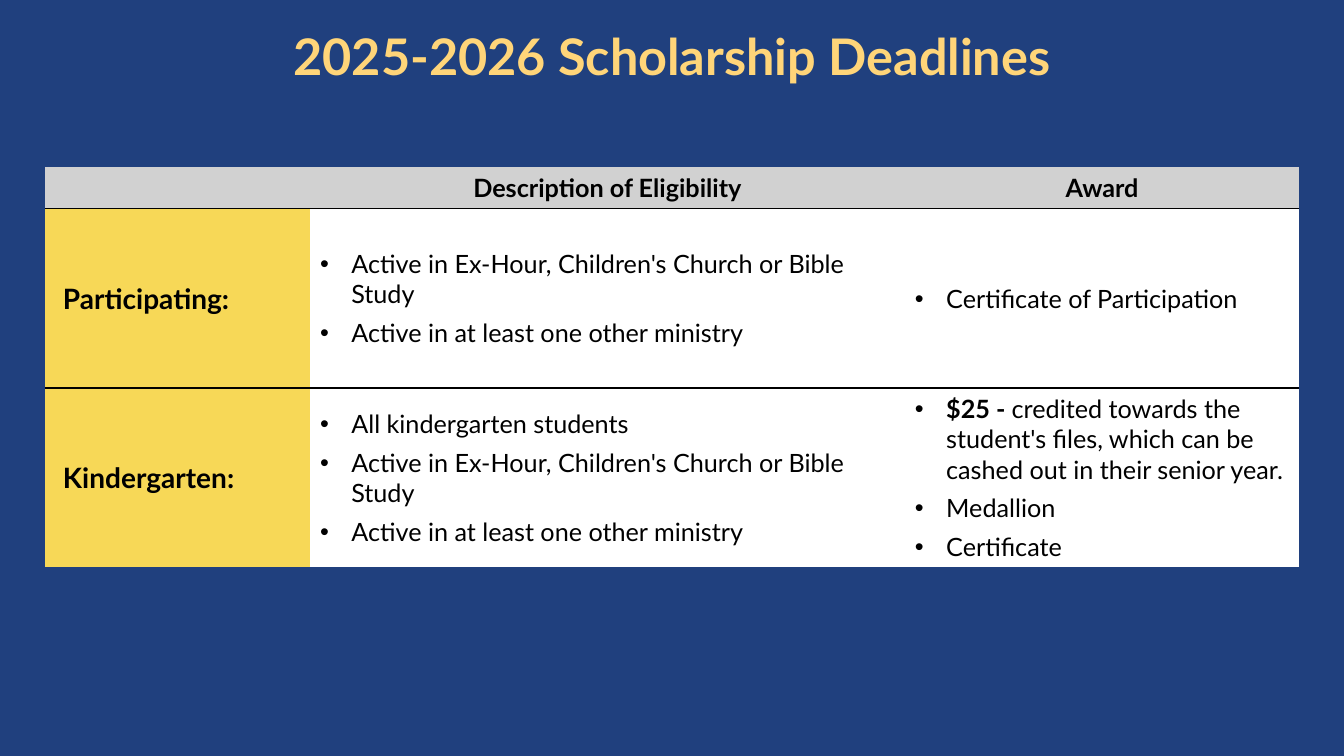
from dataclasses import dataclass

from lxml import etree
from pptx import Presentation
from pptx import util as u
from pptx.dml.color import RGBColor
from pptx.enum import text
from pptx.oxml.ns import qn


@dataclass(frozen=True)
class Theme:
    font: str = "Lato"
    navy: str = "20407E"
    gold: str = "FFD579"
    yellow: str = "F7D857"
    grey: str = "D1D1D1"
    white: str = "FFFFFF"
    black: str = "000000"
    title: int = 36
    label: int = 20
    body: int = 18
    rule: int = 1


T = Theme()
W, H = 13.33, 7.5
COLS = [2.63, 5.9, 3.91]
ROWS = [0.41, 1.78, 1.78]
LABEL_INDENT, BULLET_INDENT = 0.08, 0.31

HEADERS = ["", "Description of Eligibility", "Award"]
ACTIVE = [
    [("Active in Ex-Hour, Children's Church or Bible Study", False)],
    [("Active in at least one other ministry", False)],
]
# Each row: label, eligibility bullets, award bullets; a bullet is a list of (text, bold) runs
LEVELS = [
    ("Participating:", ACTIVE, [[("Certificate of Participation", False)]]),
    ("Kindergarten:",
     [[("All kindergarten students", False)]] + ACTIVE,
     [[("$25 - ", True),
       ("credited towards the student's files, which can be cashed out "
        "in their senior year.", False)],
      [("Medallion", False)],
      [("Certificate", False)]]),
]


def add_run(p, words, size, color, bold=False):
    r = p.add_run()
    r.text = words
    r.font.name = T.font
    r.font.size = u.Pt(size)
    r.font.bold = bold
    r.font.color.rgb = RGBColor.from_string(color)


def set_borders(cell, ruled):
    """Draw the named sides as rules and clear the others."""
    tcPr = cell._tc.get_or_add_tcPr()
    for i, side in enumerate("LRTB"):
        ln = etree.Element(qn(f"a:ln{side}"))
        if side in ruled:
            ln.set("w", str(u.Pt(T.rule)))
            fill = etree.SubElement(ln, qn("a:solidFill"))
            etree.SubElement(fill, qn("a:srgbClr"), val=T.black)
        else:
            etree.SubElement(ln, qn("a:noFill"))
        tcPr.insert(i, ln)


def style_cell(cell, fill, ruled):
    cell.fill.solid()
    cell.fill.fore_color.rgb = RGBColor.from_string(fill)
    cell.vertical_anchor = text.MSO_ANCHOR.MIDDLE
    set_borders(cell, ruled)


def add_bullets(cell, bullets):
    tf = cell.text_frame
    for i, runs in enumerate(bullets):
        p = tf.add_paragraph() if i else tf.paragraphs[0]
        p.space_after = u.Pt(6)
        pPr = p._p.get_or_add_pPr()
        pPr.set("marL", str(u.Inches(BULLET_INDENT)))
        pPr.set("indent", str(-u.Inches(BULLET_INDENT)))
        etree.SubElement(pPr, qn("a:buFont"), typeface="Arial")
        etree.SubElement(pPr, qn("a:buChar"), char="•")
        for words, bold in runs:
            add_run(p, words, T.body, T.black, bold)


def add_title(s, words, x, y, w, h):
    sp = s.shapes.title
    sp.left, sp.top, sp.width, sp.height = map(u.Inches, (x, y, w, h))
    tf = sp.text_frame
    tf.vertical_anchor = text.MSO_ANCHOR.MIDDLE
    p = tf.paragraphs[0]
    p.alignment = text.PP_ALIGN.CENTER
    p.line_spacing = 0.9
    add_run(p, words, T.title, T.gold, True)


def add_award_table(s, x, y):
    frame = s.shapes.add_table(len(ROWS), len(COLS), u.Inches(x), u.Inches(y),
                               u.Inches(sum(COLS)), u.Inches(sum(ROWS)))
    table = frame.table
    table.first_row = table.horz_banding = False
    for col, width in zip(table.columns, COLS):
        col.width = u.Inches(width)
    for row, height in zip(table.rows, ROWS):
        row.height = u.Inches(height)

    # Header row
    for c, words in enumerate(HEADERS):
        cell = table.cell(0, c)
        style_cell(cell, T.grey, "B")
        if words:
            p = cell.text_frame.paragraphs[0]
            p.alignment = text.PP_ALIGN.CENTER
            add_run(p, words, T.body, T.black, True)

    # One row for each award level
    for r, (label, eligibility, award) in enumerate(LEVELS, 1):
        ruled = "TB" if r < len(LEVELS) else "T"
        cell = table.cell(r, 0)
        style_cell(cell, T.yellow, ruled)
        p = cell.text_frame.paragraphs[0]
        p._p.get_or_add_pPr().set("marL", str(u.Inches(LABEL_INDENT)))
        add_run(p, label, T.label, T.black, True)
        for c, bullets in enumerate((eligibility, award), 1):
            style_cell(table.cell(r, c), T.white, ruled)
            add_bullets(table.cell(r, c), bullets)


def main():
    prs = Presentation()
    prs.slide_width, prs.slide_height = u.Inches(W), u.Inches(H)
    s = prs.slides.add_slide(prs.slide_layouts[5])
    s.background.fill.solid()
    s.background.fill.fore_color.rgb = RGBColor.from_string(T.navy)

    title_w = 11.5
    add_title(s, "2025-2026 Scholarship Deadlines", (W - title_w) / 2, 0.34, title_w, 0.5)
    add_award_table(s, (W - sum(COLS)) / 2, 1.66)
    prs.save("out.pptx")


if __name__ == "__main__":
    main()
